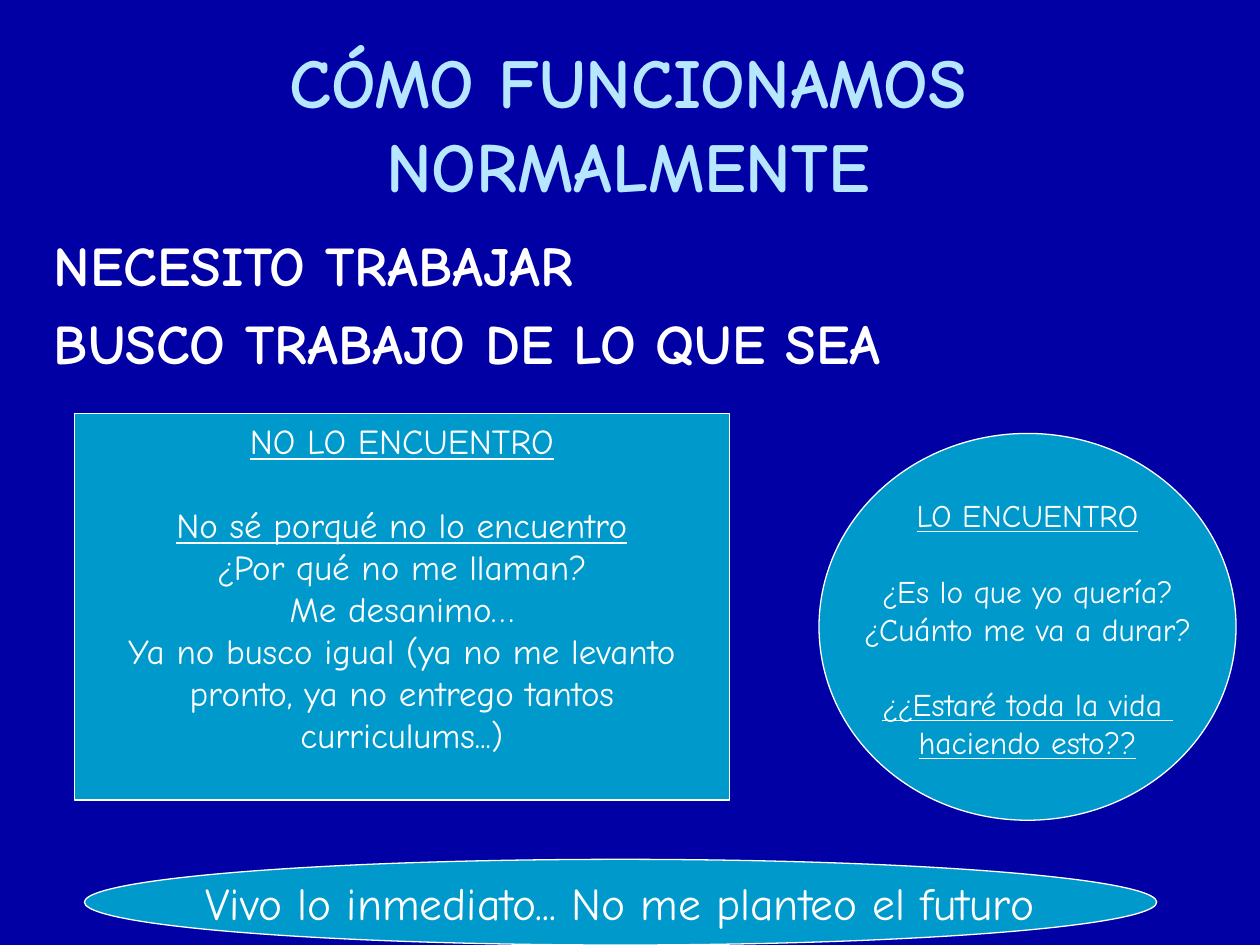
from pptx import Presentation
from pptx.dml.color import RGBColor
from pptx.enum.shapes import MSO_SHAPE as SHAPE
from pptx.enum.text import MSO_ANCHOR as ANCHOR, PP_ALIGN as ALIGN
from pptx.util import Emu, Pt

PX = 9144  # EMU per px, 100 px to the inch
FONT = "Comic Neue"
NAVY, SKY, TEAL, WHITE = "0000A4", "B7E7FF", "0099CC", "FFFFFF"


def color(hex_code):
    return RGBColor.from_string(hex_code)


def px(*values):
    return [Emu(v * PX) for v in values]


def write(tf, lines, size, hue=WHITE, bold=False, align=ALIGN.CENTER,
          anchor=ANCHOR.TOP, wrap=True, gap=0, gaps=(), underlined=()):
    """Fill a text frame; gaps and underlined hold indexes of lines."""
    tf.word_wrap = wrap
    tf.vertical_anchor = anchor
    for i, line in enumerate(lines):
        p = tf.paragraphs[0] if i == 0 else tf.add_paragraph()
        p.alignment = align
        p.space_before = Pt(gap if i in gaps else 0)
        r = p.add_run()
        r.text = line
        r.font.name, r.font.size, r.font.bold = FONT, Pt(size), bold
        r.font.underline = i in underlined
        r.font.color.rgb = color(hue)


class Deck:
    """Holds the presentation and its current slide."""

    def __init__(self, width, height, background):
        self.prs = Presentation()
        self.prs.slide_width, self.prs.slide_height = px(width, height)
        self.s = self.prs.slides.add_slide(self.prs.slide_layouts[5])
        fill = self.s.background.fill
        fill.solid()
        fill.fore_color.rgb = color(background)

    def title(self, box, text, **fmt):
        sp = self.s.shapes.title
        sp.left, sp.top, sp.width, sp.height = px(*box)
        write(sp.text_frame, [text], **fmt)

    def text(self, box, lines, **fmt):
        sp = self.s.shapes.add_textbox(*px(*box))
        write(sp.text_frame, lines, **fmt)

    def shape(self, kind, box, lines, **fmt):
        sp = self.s.shapes.add_shape(kind, *px(*box))
        sp.shadow.inherit = False
        sp.fill.solid()
        sp.fill.fore_color.rgb = color(TEAL)
        sp.line.color.rgb = color(WHITE)
        sp.line.width = Pt(0.75)
        write(sp.text_frame, lines, **fmt)


def main():
    deck = Deck(1000, 750, NAVY)
    deck.title((33, 25, 931, 145), "CÓMO FUNCIONAMOS NORMALMENTE",
               size=40, hue=SKY, bold=True, anchor=ANCHOR.MIDDLE)
    deck.text((33, 178, 934, 489),
              ["NECESITO TRABAJAR", "BUSCO TRABAJO DE LO QUE SEA"],
              size=32, bold=True, align=ALIGN.LEFT, gap=6.4, gaps=[1])
    deck.shape(SHAPE.RECTANGLE, (59, 328, 520, 307),
               ["NO LO ENCUENTRO",
                "No sé porqué no lo encuentro",
                "¿Por qué no me llaman?",
                "Me desanimo…",
                "Ya no busco igual (ya no me levanto pronto, "
                "ya no entrego tantos curriculums...)"],
               size=20, gap=24, gaps=[1], underlined=[0, 1])
    deck.shape(SHAPE.OVAL, (650, 344, 331, 307),
               ["LO ENCUENTRO",
                "¿Es lo que yo quería?",
                "¿Cuánto me va a durar?",
                "¿¿Estaré toda la vida ",
                "haciendo esto??"],
               size=18, wrap=False, gap=21.6, gaps=[1, 3],
               underlined=[0, 3, 4])
    deck.shape(SHAPE.OVAL, (67, 682, 851, 68),
               ["Vivo lo inmediato... No me planteo el futuro"],
               size=26, anchor=ANCHOR.MIDDLE, wrap=False)
    deck.prs.save("out.pptx")


if __name__ == "__main__":
    main()
